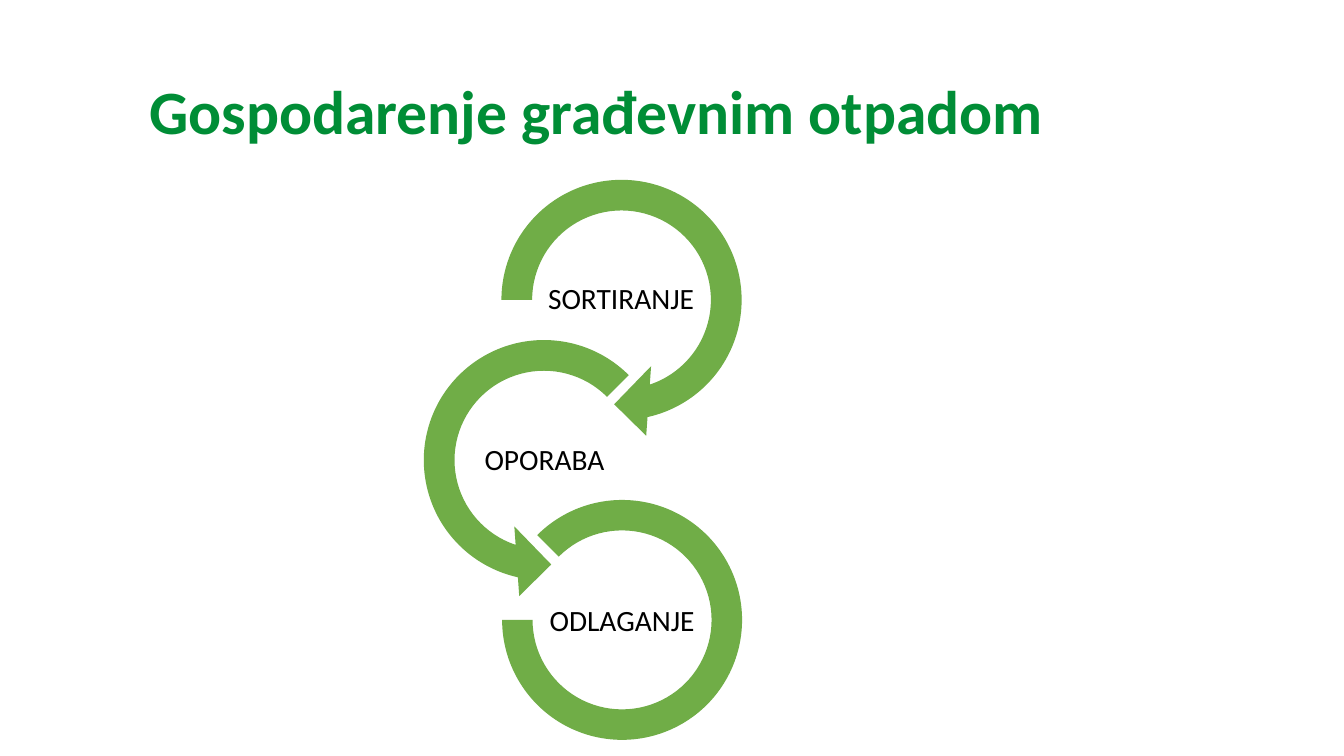
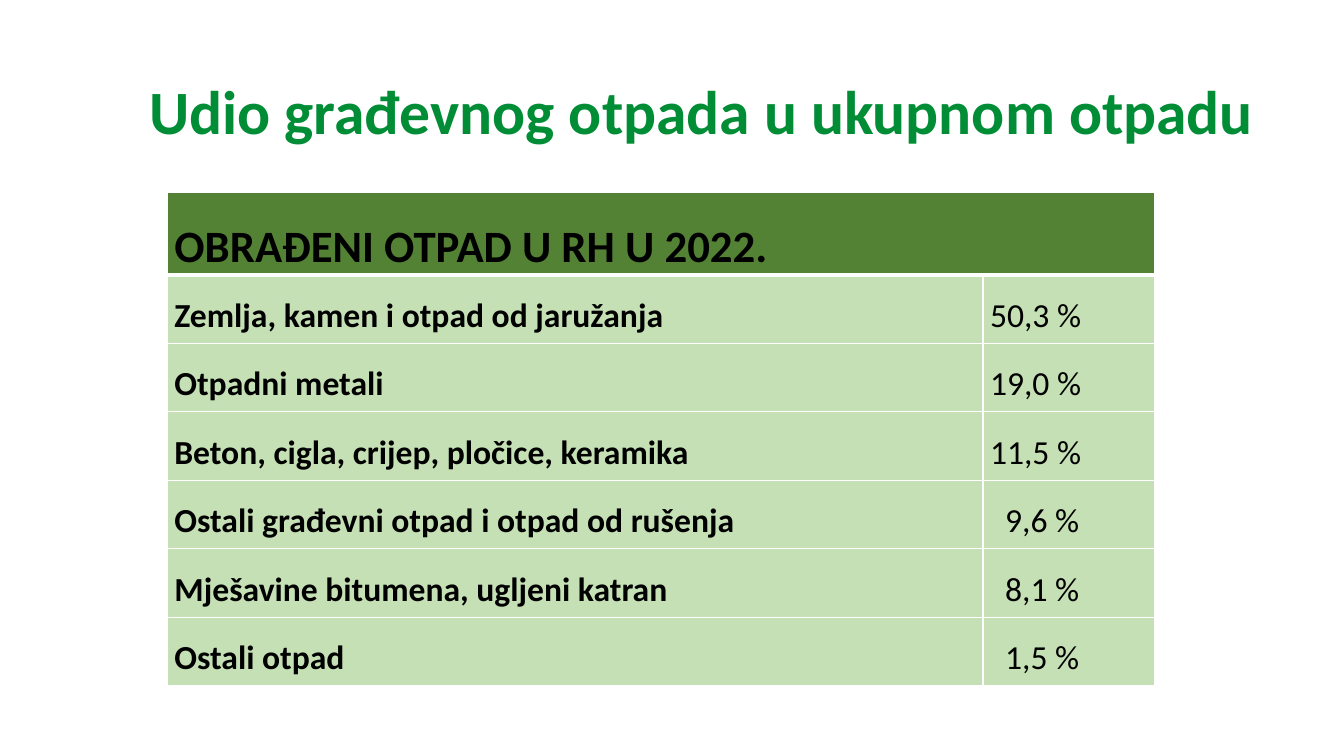
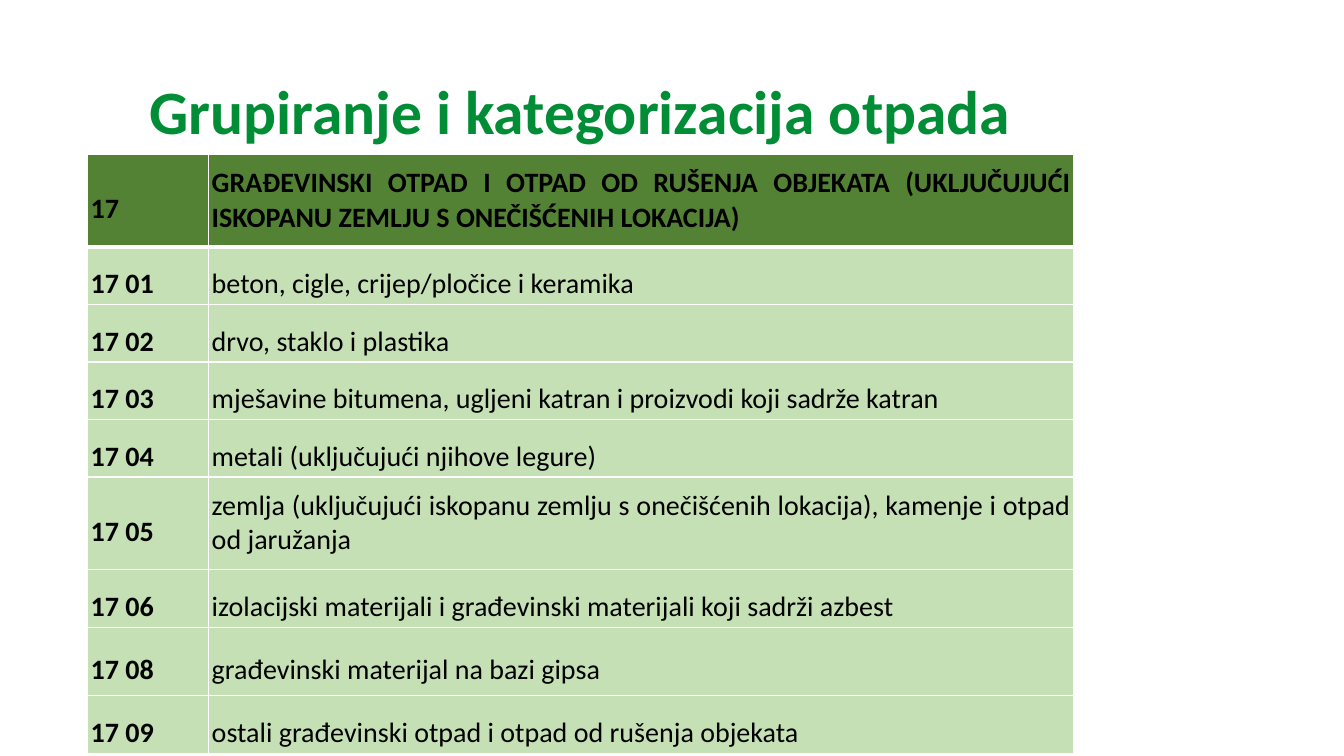
import pptx
import pptx.util
import pptx.dml.color
import pptx.enum.shapes
import pptx.enum.text
import pptx.oxml
import pptx.oxml.ns

Inches = pptx.util.Inches
Pt = pptx.util.Pt
SHAPE = pptx.enum.shapes.MSO_SHAPE
ALIGN = pptx.enum.text.PP_ALIGN
ANCHOR = pptx.enum.text.MSO_ANCHOR

FONT = "Calibri"
TITLE, BLACK, WHITE = "008D36", "000000", "FFFFFF"
ARROW, HEADER, BODY = "70AD47", "548235", "C5E0B4"

STEPS_TITLE = "Gospodarenje građevnim otpadom"
STEPS = [
    ("SORTIRANJE", SHAPE.CIRCULAR_ARROW, (4.78, 1.59, 2.77),
     (0.11, 11.42, 45, 108, 0.125), (5.39, 2.59)),
    ("OPORABA", SHAPE.LEFT_CIRCULAR_ARROW, (4.01, 3.18, 2.77),
     (0.11, 11.42, 63, 189, 0.125), (4.63, 4.19)),
    ("ODLAGANJE", SHAPE.BLOCK_ARC, (4.98, 4.96, 2.38),
     (135, 108, 0.127), (5.4, 5.79)),
]

SHARES_TITLE = "Udio građevnog otpada u ukupnom otpadu"
SHARES = [
    ("OBRAĐENI OTPAD U RH U 2022.", ""),
    ("Zemlja, kamen i otpad od jaružanja", "50,3 %"),
    ("Otpadni metali", "19,0 %"),
    ("Beton, cigla, crijep, pločice, keramika", "11,5 %"),
    ("Ostali građevni otpad i otpad od rušenja", "9,6 %"),
    ("Mješavine bitumena, ugljeni katran", "8,1 %"),
    ("Ostali otpad", "1,5 %"),
]

GROUPS_TITLE = "Grupiranje i kategorizacija otpada"
GROUPS = [
    ("17", "GRAĐEVINSKI OTPAD I OTPAD OD RUŠENJA OBJEKATA "
           "(UKLJUČUJUĆI ISKOPANU ZEMLJU S ONEČIŠĆENIH LOKACIJA)"),
    ("17 01", "beton, cigle, crijep/pločice i keramika"),
    ("17 02", "drvo, staklo i plastika"),
    ("17 03", "mješavine bitumena, ugljeni katran i proizvodi koji sadrže katran"),
    ("17 04", "metali (uključujući njihove legure)"),
    ("17 05", "zemlja (uključujući iskopanu zemlju s onečišćenih lokacija), "
              "kamenje i otpad od jaružanja"),
    ("17 06", "izolacijski materijali i građevinski materijali koji sadrži azbest"),
    ("17 08", "građevinski materijal na bazi gipsa"),
    ("17 09", "ostali građevinski otpad i otpad od rušenja objekata"),
]
GROUP_HEIGHTS = [0.92, 0.49, 0.49, 0.49, 0.49, 0.92, 0.49, 0.68, 0.49]
TWO_LINES = 0.92


def rgb(value):
    return pptx.dml.color.RGBColor.from_string(value)


def set_margins(target, x, y):
    target.margin_left = target.margin_right = Inches(x)
    target.margin_top = target.margin_bottom = Inches(y)


def write(tf, text, size, color=BLACK, bold=False, align=ALIGN.LEFT, spacing=1.0):
    p = tf.paragraphs[0]
    p.alignment = align
    p.line_spacing = spacing
    r = p.add_run()
    r.text = text
    r.font.name = FONT
    r.font.size = Pt(size)
    r.font.bold = bold
    r.font.color.rgb = rgb(color)


def add_slide(prs, title):
    s = prs.slides.add_slide(prs.slide_layouts[5])
    sp = s.shapes.title
    sp.left, sp.top, sp.width, sp.height = map(Inches, (1.38, 0.67, 11.19, 0.75))
    tf = sp.text_frame
    tf.word_wrap = True
    tf.auto_size = pptx.enum.text.MSO_AUTO_SIZE.NONE
    tf.vertical_anchor = ANCHOR.TOP
    set_margins(tf, 0.1, 0.05)
    write(tf, title, 44, TITLE, bold=True)
    return s


def add_step(s, label, kind, ring, adjustments, label_at):
    left, top, size = map(Inches, ring)
    sp = s.shapes.add_shape(kind, left, top, size, size)
    sp.shadow.inherit = False
    for i, value in enumerate(adjustments):
        sp.adjustments[i] = value
    sp.fill.solid()
    sp.fill.fore_color.rgb = rgb(ARROW)
    sp.line.fill.background()
    left, top = map(Inches, label_at)
    tf = s.shapes.add_textbox(left, top, Inches(1.54), Inches(0.77)).text_frame
    tf.word_wrap = True
    tf.vertical_anchor = ANCHOR.MIDDLE
    set_margins(tf, 0.01, 0.01)
    write(tf, label, 21, align=ALIGN.CENTER, spacing=0.9)


def set_borders(cell, row):
    widths = {"L": 1, "R": 1, "T": 3 if row == 1 else 1, "B": 3 if row == 0 else 1}
    for side, width in widths.items():
        cell._tc.get_or_add_tcPr().append(pptx.oxml.parse_xml(
            f'<a:ln{side} {pptx.oxml.ns.nsdecls("a")} w="{Pt(width)}">'
            f'<a:solidFill><a:srgbClr val="{WHITE}"/></a:solidFill></a:ln{side}>'))


def add_table(s, rows, at, widths, heights, anchor, margins):
    left, top = map(Inches, at)
    table = s.shapes.add_table(len(rows), len(widths), left, top,
                               Inches(sum(widths)), Inches(sum(heights))).table
    for column, width in zip(table.columns, widths):
        column.width = Inches(width)
    for i, height in enumerate(heights):
        table.rows[i].height = Inches(height)
        for cell in table.rows[i].cells:
            set_margins(cell, *margins)
            cell.vertical_anchor = anchor
            set_borders(cell, i)
            cell.fill.solid()
            cell.fill.fore_color.rgb = rgb(BODY if i else HEADER)
    return table


def build_steps(prs):
    s = add_slide(prs, STEPS_TITLE)
    for step in STEPS:
        add_step(s, *step)


def build_shares(prs):
    s = add_slide(prs, SHARES_TITLE)
    table = add_table(s, SHARES, (1.66, 1.91), (8.09, 1.7), [0.68] * len(SHARES),
                      ANCHOR.TOP, (0.07, 0))
    table.cell(0, 0).merge(table.cell(0, 1))
    for i, (name, share) in enumerate(SHARES):
        write(table.cell(i, 0).text_frame, name, 24 if i else 32, bold=True,
              align=ALIGN.JUSTIFY, spacing=1.5)
        if share:
            cell = table.cell(i, 1)
            if len(share) < len("50,3 %"):
                cell.margin_left = Inches(0.22)
            write(cell.text_frame, share, 24, align=ALIGN.JUSTIFY, spacing=1.5)


def build_groups(prs):
    s = add_slide(prs, GROUPS_TITLE)
    table = add_table(s, GROUPS, (0.87, 1.53), (1.2, 8.58), GROUP_HEIGHTS,
                      ANCHOR.MIDDLE, (0.03, 0.03))
    for i, (code, name) in enumerate(GROUPS):
        write(table.cell(i, 0).text_frame, code, 20, bold=True,
              align=ALIGN.JUSTIFY, spacing=1.5)
        write(table.cell(i, 1).text_frame, name, 20, bold=i == 0, align=ALIGN.JUSTIFY,
              spacing=1.0 if GROUP_HEIGHTS[i] == TWO_LINES else 1.5)


def main():
    prs = pptx.Presentation()
    prs.slide_width, prs.slide_height = Inches(13.33), Inches(7.5)
    build_steps(prs)
    build_shares(prs)
    build_groups(prs)
    prs.save("out.pptx")


if __name__ == "__main__":
    main()
